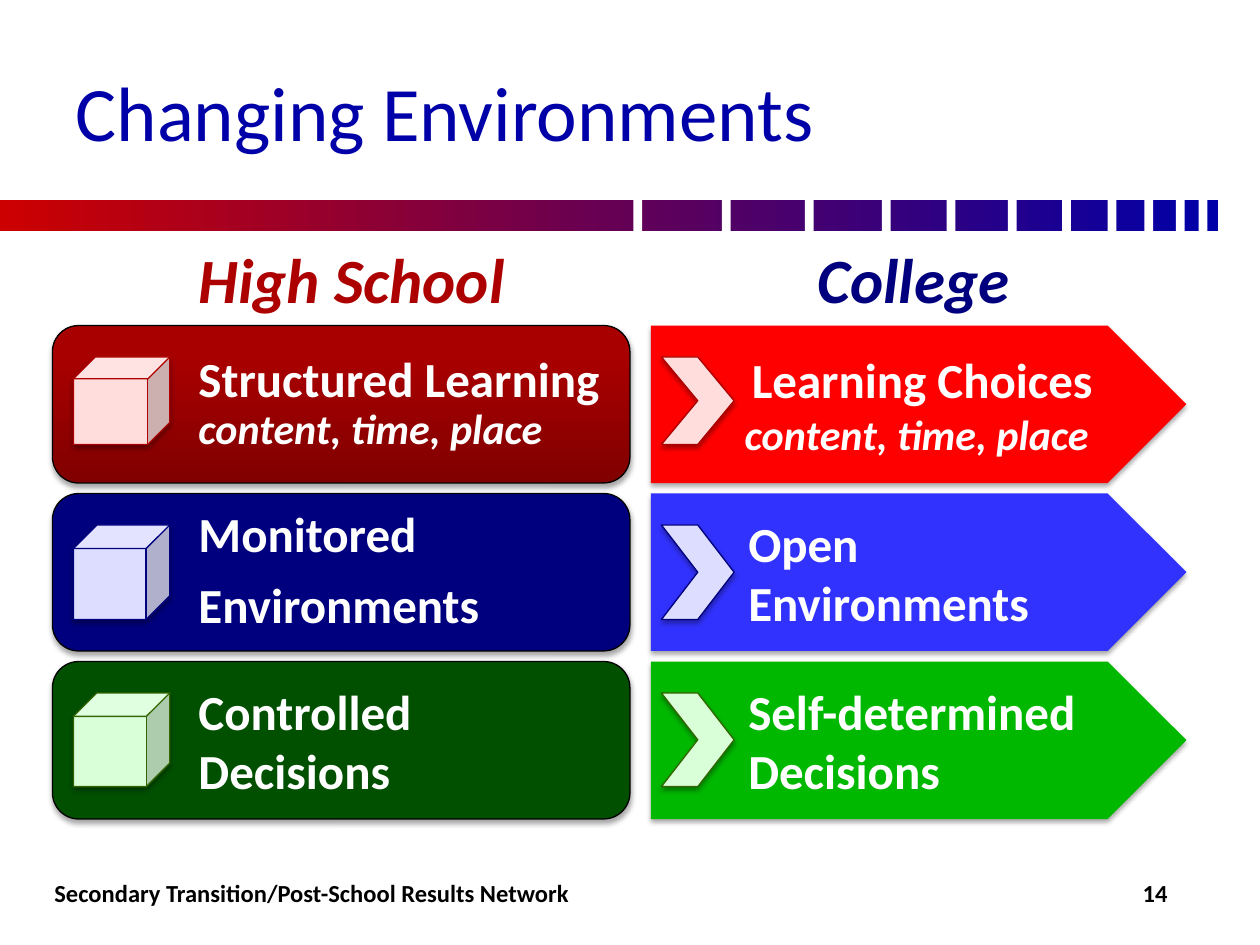
import pptx
import pptx.dml.color
import pptx.enum.shapes
import pptx.enum.text
import pptx.util
from lxml import etree

Pt = pptx.util.Pt
SHAPE = pptx.enum.shapes.MSO_SHAPE
ALIGN = pptx.enum.text.PP_ALIGN
MIDDLE = pptx.enum.text.MSO_ANCHOR.MIDDLE
DRAWING_NS = "http://schemas.openxmlformats.org/drawingml/2006/main"

COLORS = {
    "white": "FFFFFF", "black": "000000",
    "title": "0000A8", "bar start": "CC0000", "bar end": "0000A8",
    "crimson": "AD0000", "maroon": "810000", "dark red": "A80000",
    "red": "FF0000", "pale red": "FFDDDD",
    "navy": "00007E", "blue": "3232FF", "pale blue": "DDDDFF",
    "dark green": "005000", "green": "00B800", "pale green": "D9FFD9",
    "olive": "336600",
}


def rgb(name):
    return pptx.dml.color.RGBColor.from_string(COLORS[name])


def write(paragraph, text, size=28, color="white", bold=True, italic=False,
          align=ALIGN.LEFT, indent=0, spacing=None, after=None):
    """Append a run to the paragraph and format both; indent is in points."""
    paragraph.alignment = align
    paragraph.line_spacing = spacing
    if after is not None:
        paragraph.space_after = Pt(after)
    if indent:
        properties = paragraph._p.get_or_add_pPr()
        properties.set("marL", str(Pt(indent)))
        properties.set("indent", "0")
    run = paragraph.add_run()
    run.text = text
    font = run.font
    font.name, font.size = "Calibri", Pt(size)
    font.bold, font.italic = bold, italic
    font.color.rgb = rgb(color)


class SlideBuilder:
    def __init__(self, slide, font_margin=(7.2, 3.6)):
        self.slide = slide
        self.margin = font_margin

    def prepare_frame(self, shape):
        frame = shape.text_frame
        frame.word_wrap = True
        frame.vertical_anchor = MIDDLE
        frame.margin_left = frame.margin_right = Pt(self.margin[0])
        frame.margin_top = frame.margin_bottom = Pt(self.margin[1])
        return frame

    def title(self, text, left, top, width, height):
        title = self.slide.shapes.title
        title.left, title.top = Pt(left), Pt(top)
        title.width, title.height = Pt(width), Pt(height)
        frame = self.prepare_frame(title)
        write(frame.paragraphs[0], text, size=44, color="title", bold=False)

    def label(self, text, left, top, width, height, **style):
        box = self.slide.shapes.add_textbox(Pt(left), Pt(top), Pt(width), Pt(height))
        write(self.prepare_frame(box).paragraphs[0], text, **style)

    def shape(self, kind, left, top, width, height, fill, line=None,
              shadow=True, parent=None):
        """Add a preset shape; fill is a colour, or (start, end, end stop, angle)."""
        shapes = (parent or self.slide).shapes
        shape = shapes.add_shape(kind, Pt(left), Pt(top), Pt(width), Pt(height))
        if isinstance(fill, tuple):
            start, end, end_stop, angle = fill
            shape.fill.gradient()
            shape.fill.gradient_angle = angle
            first, last = shape.fill.gradient_stops
            first.color.rgb, last.color.rgb = rgb(start), rgb(end)
            first.position, last.position = 0, end_stop
        else:
            shape.fill.solid()
            shape.fill.fore_color.rgb = rgb(fill)
        if line:
            shape.line.color.rgb = rgb(line)
            shape.line.width = Pt(0.75)
        else:
            shape.line.fill.background()
        shape.shadow.inherit = False
        if shadow:
            self.cast_shadow(shape)
        return shape

    def cast_shadow(self, shape):
        effects = shape._element.spPr.find(f"{{{DRAWING_NS}}}effectLst")
        outer = etree.SubElement(
            effects, f"{{{DRAWING_NS}}}outerShdw", blurRad=str(Pt(3.1)),
            dist=str(Pt(1.8)), dir="5400000", rotWithShape="0")
        color = etree.SubElement(outer, f"{{{DRAWING_NS}}}srgbClr", val=COLORS["black"])
        etree.SubElement(color, f"{{{DRAWING_NS}}}alpha", val="35000")

    def panel(self, kind, box, fill, line, paragraphs, marker, marker_box, marker_colors):
        """Group a text panel with its marker; each paragraph is a list of (text, style)."""
        group = self.slide.shapes.add_group_shape()
        panel = self.shape(kind, *box, fill, line, parent=group)
        frame = self.prepare_frame(panel)
        for number, runs in enumerate(paragraphs):
            paragraph = frame.add_paragraph() if number else frame.paragraphs[0]
            for text, style in runs:
                write(paragraph, text, **style)
        self.shape(marker, *marker_box, *marker_colors, parent=group)

    def divider(self, top, height, width, gaps, gap_width):
        self.shape(SHAPE.RECTANGLE, 0, top, width, height,
                   ("bar start", "bar end", 1, 0), shadow=False)
        for left in gaps:
            self.shape(SHAPE.RECTANGLE, left, top, gap_width, height, "white", shadow=False)


SCHOOL = {"indent": 72}
SCHOOL_SPACED = {"indent": 72, "spacing": 0.9, "after": 10}
COLLEGE = {"indent": 48.5}
DETAIL = {"size": 24, "italic": True}

# school fill, school lines, college fill, college lines, marker colours, marker height
ROWS = [
    (("maroon", "dark red", 0.8, 90),
     [[("Structured Learning ", SCHOOL_SPACED),
       ("content, time, place", SCHOOL_SPACED | DETAIL)]],
     "red",
     [[("Learning Choices", {"indent": 50.5})],
      [("content, time, place", DETAIL | {"indent": 46.5})]],
     ("pale red", "crimson"), 50),
    ("navy",
     [[("Monitored", SCHOOL_SPACED)], [("Environments", SCHOOL_SPACED)]],
     "blue",
     [[("Open", COLLEGE)], [("Environments", COLLEGE)]],
     ("pale blue", "navy"), 54),
    ("dark green",
     [[("Controlled", SCHOOL)], [("Decisions", SCHOOL)]],
     "green",
     [[("Self-determined", COLLEGE)], [("Decisions", COLLEGE)]],
     ("pale green", "olive"), 53.5),
]
FIRST_ROW, ROW_STEP, ROW_HEIGHT = 186, 96, 90
BAR_GAPS = [362, 412.5, 460, 504, 541, 576, 607, 633, 654, 672, 685]


def main():
    deck = pptx.Presentation()
    deck.slide_width, deck.slide_height = Pt(720), Pt(540)
    builder = SlideBuilder(deck.slides.add_slide(deck.slide_layouts[5]))

    builder.divider(114, 18, 696, BAR_GAPS, 5)
    builder.title("Changing Environments", 36, 18, 648, 90)
    heading = {"size": 36, "italic": True, "align": ALIGN.CENTER}
    builder.label("High School", 42, 132, 318, 54, color="crimson", **heading)
    builder.label("College", 390, 132, 264, 54, color="navy", **heading)

    for number, row in enumerate(ROWS):
        school_fill, school, college_fill, college, marker_colors, marker_height = row
        top = FIRST_ROW + number * ROW_STEP
        builder.panel(SHAPE.ROUNDED_RECTANGLE, (30, top, 330, ROW_HEIGHT),
                      school_fill, "black", school,
                      SHAPE.CUBE, (42, top + 18, 55, marker_height), marker_colors)
        builder.panel(SHAPE.PENTAGON, (372, top, 306, ROW_HEIGHT),
                      college_fill, None, college,
                      SHAPE.CHEVRON, (378, top + 18, 41.5, marker_height), marker_colors)

    footer = {"size": 14, "color": "black"}
    builder.label("14", 630, 492, 60, 36, align=ALIGN.CENTER, **footer)
    builder.label("Secondary Transition/Post-School Results Network",
                  24, 492, 330, 36, **footer)
    deck.save("out.pptx")


if __name__ == "__main__":
    main()
